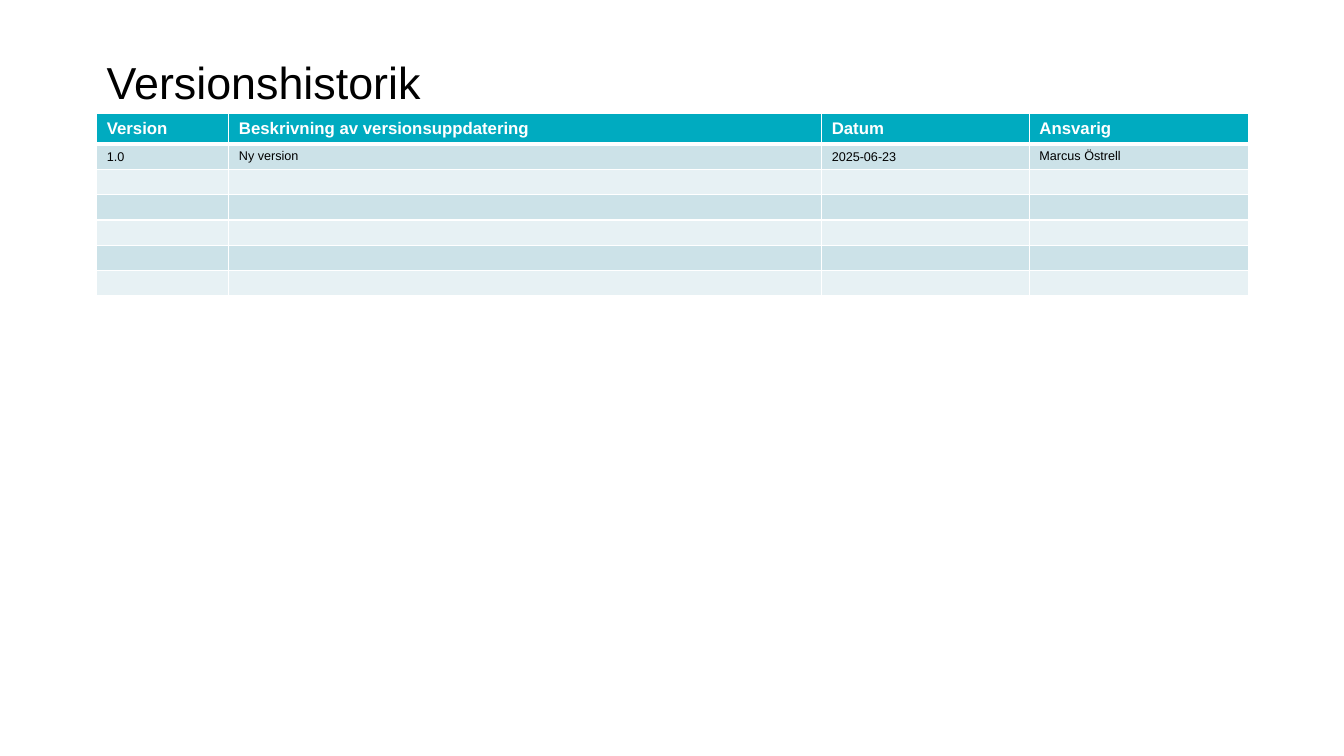
"""Build the version history slide."""
import pptx
import pptx.dml.color
import pptx.enum.text
import pptx.oxml
import pptx.oxml.ns
import pptx.util

Inches, Pt = pptx.util.Inches, pptx.util.Pt
RGBColor = pptx.dml.color.RGBColor
Anchor = pptx.enum.text.MSO_ANCHOR

TITLE = "Versionshistorik"
HEAD = ["Version", "Beskrivning av versionsuppdatering", "Datum", "Ansvarig"]
ENTRY = ["1.0", "Ny version", "2025-06-23", "Marcus Östrell"]
ROWS = [HEAD, ENTRY] + [[""] * 4] * 5
WIDTHS = [1.31, 5.88, 2.06, 2.17]
HEIGHTS = [0.29] + [0.24] * 6
LEFT, TOP = 0.96, 1.13

WHITE = RGBColor(0xFF, 0xFF, 0xFF)
BLACK = RGBColor(0, 0, 0)
TEAL = RGBColor(0x00, 0xAB, 0xC0)
MIST = RGBColor(0xCC, 0xE2, 0xE8)
PALE = RGBColor(0xE7, 0xF1, 0xF4)

FONTS = {
    "title": {"name": "Arial", "size": Pt(32), "bold": False},
    "head": {"name": "Arial", "size": Pt(12), "bold": True},
    "body": {"name": "Arial", "size": Pt(9), "bold": False},
}


def style(run, kind, color):
    for key, value in FONTS[kind].items():
        setattr(run.font, key, value)
    run.font.color.rgb = color


def border(cell, sides):
    props = cell._tc.get_or_add_tcPr()
    for spot, (side, width) in enumerate(sides.items()):
        props.insert(spot, pptx.oxml.parse_xml(
            f'<a:{side} {pptx.oxml.ns.nsdecls("a")} w="{Pt(width)}"><a:solidFill>'
            f'<a:srgbClr val="{WHITE}"/></a:solidFill></a:{side}>'))


def fill(cell, text, row, col):
    kind = "body" if row else "head"
    cell.fill.solid()
    cell.fill.fore_color.rgb = (MIST if row % 2 else PALE) if row else TEAL
    if row == 1 and col in (0, 2):
        cell.vertical_anchor = Anchor.MIDDLE
    border(cell, {"lnL": 1, "lnR": 1, "lnT": 3 if row == 1 else 1,
                  "lnB": 1 if row else 3})
    para = cell.text_frame.paragraphs[0]
    if text:
        run = para.add_run()
        run.text = text
        style(run, kind, BLACK if row else WHITE)
    else:
        size = int(FONTS[kind]["size"].pt * 100)
        para._p.append(pptx.oxml.parse_xml(
            f'<a:endParaRPr {pptx.oxml.ns.nsdecls("a")} sz="{size}">'
            '<a:latin typeface="Arial"/></a:endParaRPr>'))


def main():
    deck = pptx.Presentation()
    deck.slide_width, deck.slide_height = Inches(13.33), Inches(7.5)
    slide = deck.slides.add_slide(deck.slide_layouts[6])
    wide = Inches(sum(WIDTHS))

    box = slide.shapes.add_textbox(Inches(LEFT), Inches(0.43), wide, Inches(0.47))
    frame = box.text_frame
    frame.word_wrap = True
    frame.vertical_anchor = Anchor.TOP
    frame.margin_top, frame.margin_bottom = Inches(0.11), 0
    run = frame.paragraphs[0].add_run()
    run.text = TITLE
    style(run, "title", BLACK)

    table = slide.shapes.add_table(
        len(ROWS), len(HEAD), Inches(LEFT), Inches(TOP), wide,
        Inches(sum(HEIGHTS))).table
    for col, width in enumerate(WIDTHS):
        table.columns[col].width = Inches(width)
    for row, texts in enumerate(ROWS):
        table.rows[row].height = Inches(HEIGHTS[row])
        for col, text in enumerate(texts):
            fill(table.cell(row, col), text, row, col)

    deck.save("out.pptx")


if __name__ == "__main__":
    main()
